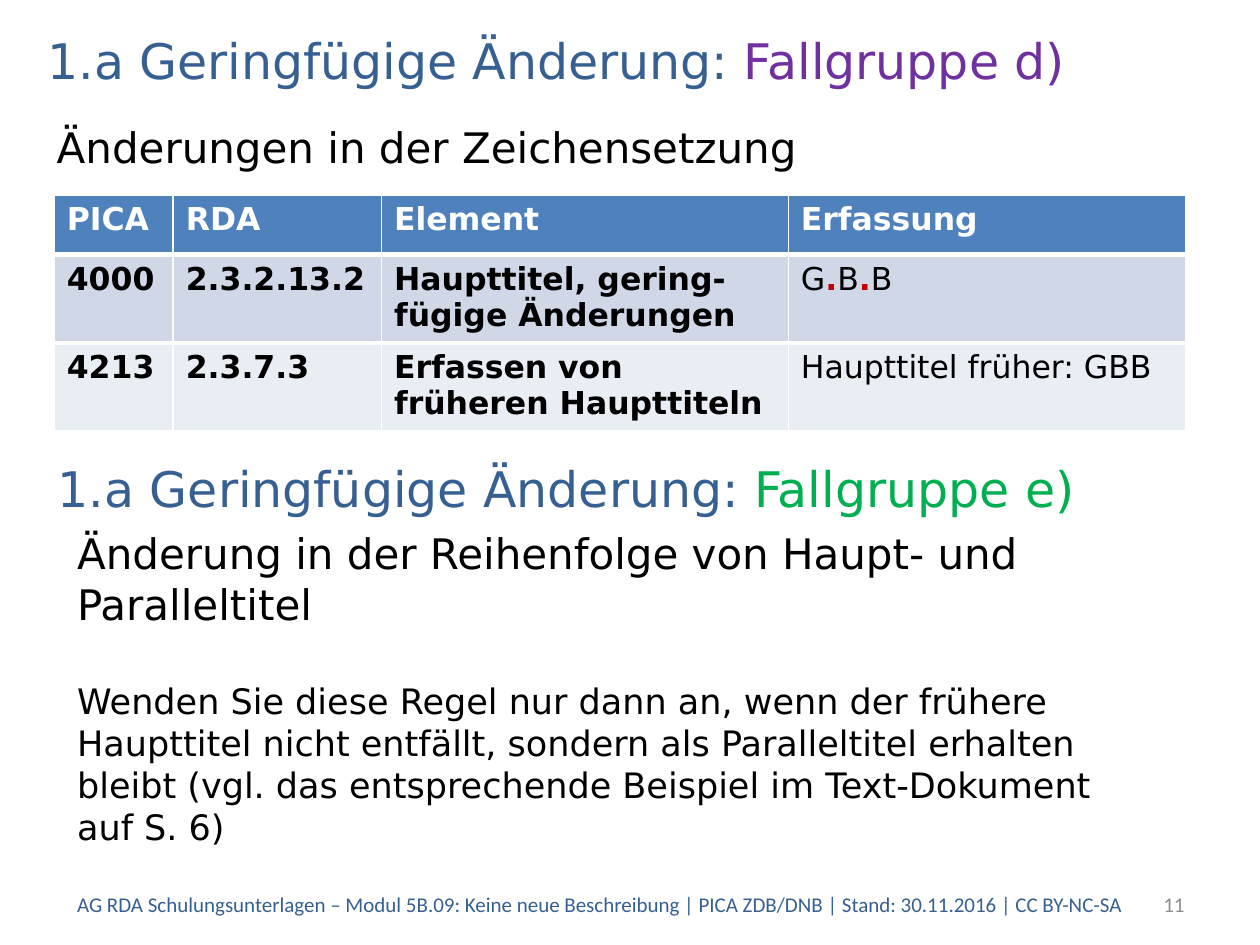
from lxml import etree
from pptx import Presentation
from pptx.dml.color import RGBColor
from pptx.enum import text
from pptx.oxml import ns
from pptx.util import Pt

BLUE = RGBColor(0x37, 0x60, 0x92)
PURPLE = RGBColor(0x70, 0x30, 0xA0)
GREEN = RGBColor(0x00, 0xB0, 0x50)
RED = RGBColor(0xC0, 0x00, 0x00)
GREY = RGBColor(0x8C, 0x8C, 0x8C)
BLACK = RGBColor(0x00, 0x00, 0x00)
WHITE = RGBColor(0xFF, 0xFF, 0xFF)
HEADER_FILL = RGBColor(0x4F, 0x81, 0xBD)
BAND_FILLS = [RGBColor(0xD0, 0xD8, 0xE8), RGBColor(0xE9, 0xED, 0xF4)]

HEADING = "1.a Geringfügige Änderung: "
COLUMN_WIDTHS = [68, 119, 232.5, 227]
ROW_HEIGHTS = [34, 50, 50]
HEADER = ["PICA", "RDA", "Element", "Erfassung"]
ROWS = [
    ["4000", "2.3.2.13.2", "Haupttitel, gering-fügige Änderungen", "G.B.B"],
    ["4213", "2.3.7.3", "Erfassen von früheren Haupttiteln", "Haupttitel früher: GBB"],
]


def add_run(p, content, size=18, color=BLACK, bold=False, font="DejaVu Sans"):
    """Append one formatted run to a paragraph."""
    r = p.add_run()
    r.text = content
    r.font.size = Pt(size)
    r.font.name = font
    r.font.bold = bold
    r.font.color.rgb = color


def add_box(s, left, top, width, height, anchor=text.MSO_ANCHOR.TOP):
    """Add a wrapping text box and return its text frame."""
    sp = s.shapes.add_textbox(Pt(left), Pt(top), Pt(width), Pt(height))
    tf = sp.text_frame
    tf.word_wrap = True
    tf.vertical_anchor = anchor
    return tf


def add_heading(s, left, top, width, height, group, color):
    """Add a heading that ends with a coloured case group."""
    p = add_box(s, left, top, width, height, text.MSO_ANCHOR.MIDDLE).paragraphs[0]
    add_run(p, HEADING, size=28, color=BLUE)
    add_run(p, group, size=28, color=color)


def add_body(s, left, top, width, height, lead, detail=None):
    """Add a lead paragraph and an optional smaller detail paragraph."""
    tf = add_box(s, left, top, width, height)
    add_run(tf.paragraphs[0], lead, size=24)
    if detail:
        p = tf.add_paragraph()
        p.space_before = Pt(29)
        add_run(p, detail, size=20)


def set_border(cell, side, width):
    """Give one side of a cell a white border."""
    line = etree.Element(ns.qn(f"a:ln{side}"), w=str(Pt(width)))
    fill = etree.SubElement(line, ns.qn("a:solidFill"))
    etree.SubElement(fill, ns.qn("a:srgbClr"), val=str(WHITE))
    cell.fill.solid()
    cell._tc.tcPr.insert(0, line)


def add_title_table(s, left, top):
    """Add the table of title elements and their recording."""
    size = Pt(sum(COLUMN_WIDTHS)), Pt(sum(ROW_HEIGHTS))
    table = s.shapes.add_table(3, 4, Pt(left), Pt(top), *size).table
    for column, width in zip(table.columns, COLUMN_WIDTHS):
        column.width = Pt(width)
    for row, height in zip(table.rows, ROW_HEIGHTS):
        row.height = Pt(height)
    fills = [HEADER_FILL, *BAND_FILLS]
    for i, (values, fill) in enumerate(zip([HEADER, *ROWS], fills)):
        for j, value in enumerate(values):
            cell = table.cell(i, j)
            cell.fill.solid()
            cell.fill.fore_color.rgb = fill
            if i < 2:
                set_border(cell, "T" if i else "B", 3)
            p = cell.text_frame.paragraphs[0]
            if value == "G.B.B":
                for char in value:
                    dot = char == "."
                    add_run(p, char, color=RED if dot else BLACK, bold=dot)
            else:
                add_run(p, value, color=BLACK if i else WHITE, bold=i == 0 or j < 3)


def add_footer(s, left, top, width, height):
    """Add the footer line and the right-aligned slide number."""
    middle = text.MSO_ANCHOR.MIDDLE
    p = add_box(s, left, top, width - 23.5, height, middle).paragraphs[0]
    add_run(p, "AG RDA Schulungsunterlagen – Modul 5B.09: Keine neue Beschreibung | "
            "PICA ZDB/DNB | Stand: 30.11.2016 | CC BY-NC-SA",
            size=12, color=BLUE, font="Calibri")
    p = add_box(s, left + width - 114.5, top, 114.5, height, middle).paragraphs[0]
    p.alignment = text.PP_ALIGN.RIGHT
    add_run(p, "11", size=12, color=GREY, font="Calibri")


def main():
    """Build and save the slide."""
    prs = Presentation()
    prs.slide_width, prs.slide_height = Pt(720), Pt(540)
    s = prs.slides.add_slide(prs.slide_layouts[6])
    add_heading(s, 20, 14, 680, 40.5, "Fallgruppe d)", PURPLE)
    add_body(s, 25.3, 66, 657.5, 36, "Änderungen in der Zeichensetzung")
    add_title_table(s, 31, 111.5)
    add_heading(s, 26, 258.5, 629, 41, "Fallgruppe e)", GREEN)
    add_body(s, 37, 298, 618, 213,
             "Änderung in der Reihenfolge von Haupt- und Paralleltitel",
             "Wenden Sie diese Regel nur dann an, wenn der frühere Haupttitel "
             "nicht entfällt, sondern als Paralleltitel erhalten bleibt (vgl. das "
             "entsprechende Beispiel im Text-Dokument auf S. 6)")
    add_footer(s, 37, 502, 647, 29)
    prs.save("out.pptx")


if __name__ == "__main__":
    main()
